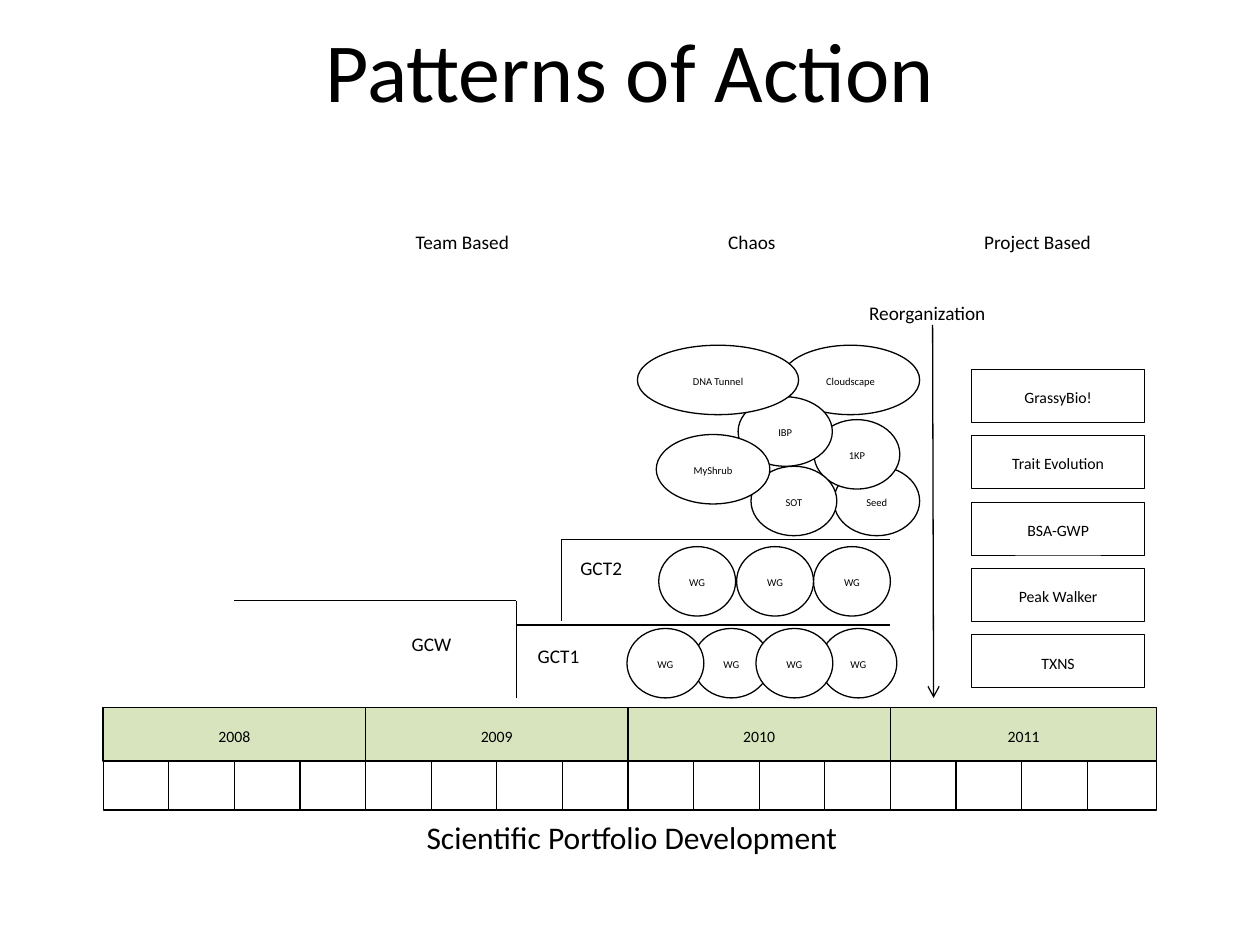
import pptx
import pptx.dml.color
import pptx.enum.shapes
import pptx.enum.text
import pptx.oxml
import pptx.oxml.ns
import pptx.util

Cm = pptx.util.Cm
Pt = pptx.util.Pt
SHAPE = pptx.enum.shapes.MSO_SHAPE
ALIGN = pptx.enum.text.PP_ALIGN
ANCHOR = pptx.enum.text.MSO_ANCHOR

BLACK = pptx.dml.color.RGBColor(0x00, 0x00, 0x00)
WHITE = pptx.dml.color.RGBColor(0xFF, 0xFF, 0xFF)
GREEN = pptx.dml.color.RGBColor(0xD7, 0xE4, 0xBD)
FONT = "Calibri"


def write(frame, wording, size, align=ALIGN.CENTER, anchor=ANCHOR.MIDDLE):
    frame.word_wrap = True
    frame.vertical_anchor = anchor
    paragraph = frame.paragraphs[0]
    paragraph.text = wording
    paragraph.alignment = align
    for run in paragraph.runs:
        run.font.name = FONT
        run.font.size = Pt(size)
        run.font.color.rgb = BLACK
    return paragraph


def add_node(slide, kind, box, wording="", size=9, fill=WHITE, weight=0.75):
    node = slide.shapes.add_shape(kind, *map(Cm, box))
    node.shadow.inherit = False
    node.fill.solid()
    node.fill.fore_color.rgb = fill
    node.line.color.rgb = BLACK
    node.line.width = Pt(weight)
    if wording:
        node.text_frame.margin_left = node.text_frame.margin_right = 0
        paragraph = write(node.text_frame, wording, size)
        paragraph.line_spacing = 1.15
        paragraph.space_after = Pt(10)


def add_label(slide, box, wording, anchor=ANCHOR.TOP):
    label = slide.shapes.add_textbox(*map(Cm, box))
    paragraph = write(label.text_frame, wording, 11, ALIGN.LEFT, anchor)
    paragraph.line_spacing = 1.15
    paragraph.space_after = Pt(10)


def add_line(slide, start, end, arrow=False):
    line = slide.shapes.add_connector(
        pptx.enum.shapes.MSO_CONNECTOR.STRAIGHT, *map(Cm, (*start, *end)))
    line.line.color.rgb = BLACK
    line.line.width = Pt(0.75)
    properties = line._element.spPr
    if arrow:
        tail = pptx.oxml.ns.qn("a:tailEnd")
        line.line._get_or_add_ln().append(
            properties.makeelement(tail, {"type": "arrow"}))
    properties.append(
        properties.makeelement(pptx.oxml.ns.qn("a:effectLst"), {}))


def add_title(slide, left, top, width, height):
    title = slide.shapes.title
    title.left, title.top, title.width, title.height = map(
        Cm, (left, top, width, height))
    write(title.text_frame, "Patterns of Action", 48)


def add_timeline(slide, left, top):
    year_width, year_height, quarter_height = 5.29, 1.07, 0.99
    quarter_width = year_width / 4
    last_extra = 0.08
    for index, year in enumerate(("2008", "2009", "2010", "2011")):
        extra = last_extra if index == 3 else 0
        add_node(slide, SHAPE.RECTANGLE,
                 (left + index * year_width, top, year_width + extra, year_height),
                 year, fill=GREEN)
    for index in range(16):
        extra = last_extra if index == 15 else 0
        add_node(slide, SHAPE.RECTANGLE,
                 (left + index * quarter_width, top + year_height,
                  quarter_width + extra, quarter_height))


def add_team_steps(slide, left, top):
    step_edges = (
        ((0, 1.24), (5.69, 1.24)),
        ((5.69, 1.24), (5.69, 3.2)),
        ((5.69, 1.73), (13.23, 1.73)),
        ((6.6, 1.65), (6.6, 0)),
        ((6.6, 0), (13.23, 0)),
    )
    for start, end in step_edges:
        add_line(slide, (left + start[0], top + start[1]),
                 (left + end[0], top + end[1]))
    working_groups = ((0.15, (11.68, 10.13, 8.56)),
                      (1.8, (9.25, 11.81, 10.52, 7.92)))
    for y, columns in working_groups:
        for x in columns:
            add_node(slide, SHAPE.OVAL, (left + x, top + y, 1.55, 1.4), "WG", 6)
    for team, x, y in (("GCW", 3.33, 1.68), ("GCT2", 6.73, 0.15),
                       ("GCT1", 5.87, 1.93)):
        add_label(slide, (left + x, top + y, 1.7, 1.19), team)


def add_chaos_cluster(slide, left, top):
    efforts = (
        ("Seed", 3.96, 2.44, 1.73),
        ("Cloudscape", 2.9, 0, 2.79),
        ("1KP", 3.56, 1.5, 1.73),
        ("SOT", 2.29, 2.44, 1.73),
        ("IBP", 2.03, 1.04, 1.9),
        ("DNA Tunnel", 0, 0, 3.25),
        ("MyShrub", 0.38, 1.8, 2.29),
    )
    for effort, x, y, width in efforts:
        add_node(slide, SHAPE.OVAL, (left + x, top + y, width, 1.4), effort, 6)


def add_project_stack(slide, left, top):
    projects = ("GrassyBio!", "Trait Evolution", "BSA-GWP", "Peak Walker", "TXNS")
    for index, project in enumerate(projects):
        add_node(slide, SHAPE.RECTANGLE, (left, top + index * 1.34, 3.5, 1.07),
                 project, weight=0.5)


def add_reorganization(slide, left, top):
    add_label(slide, (left, top, 3.61, 1.35), "Reorganization", ANCHOR.MIDDLE)
    add_line(slide, (left + 1.53, top + 0.96), (left + 1.55, top + 8.48), arrow=True)


def add_phases(slide, left, top):
    for phase, x, width in (("Team Based", 0, 3.02), ("Chaos", 6.3, 1.83),
                            ("Project Based", 11.46, 3.33)):
        add_label(slide, (left + x, top, width, 1.55), phase)


def add_caption(slide, left, top, width, height):
    caption = slide.shapes.add_textbox(*map(Cm, (left, top, width, height)))
    write(caption.text_frame, "Scientific Portfolio Development", 18)
    caption.text_frame.word_wrap = False


def main():
    deck = pptx.Presentation()
    deck.slide_width, deck.slide_height = Cm(25.4), Cm(19.05)
    slide = deck.slides.add_slide(deck.slide_layouts[5])
    add_title(slide, 1.27, -0.2, 22.86, 3.18)
    add_timeline(slide, 2.08, 14.27)
    add_team_steps(slide, 4.72, 10.87)
    add_chaos_cluster(slide, 12.85, 6.96)
    add_project_stack(slide, 19.58, 7.44)
    add_reorganization(slide, 17.27, 5.59)
    add_phases(slide, 8.13, 4.45)
    add_caption(slide, 8.28, 16.36, 8.92, 1.02)
    deck.save("out.pptx")


if __name__ == "__main__":
    main()
